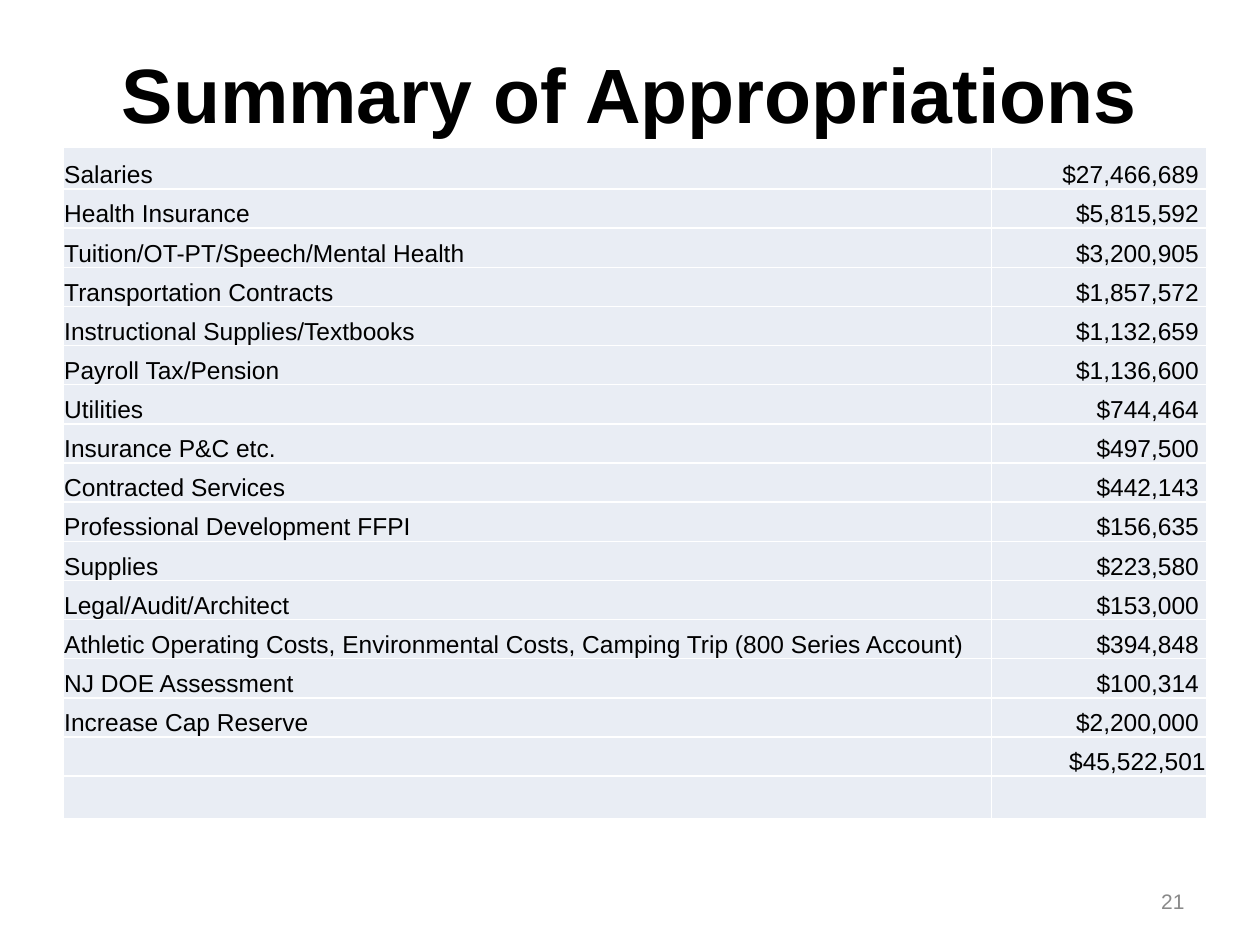
"""Build the Summary of Appropriations slide."""
from lxml.etree import SubElement
from pptx import Presentation
from pptx.dml.color import RGBColor
from pptx.enum.text import MSO_ANCHOR as Anchor, PP_ALIGN as Align
from pptx.oxml.ns import qn
from pptx.util import Inches, Pt


def style_text(text_frame, text, size, color, alignment, bold=False):
    text_frame.text = text
    paragraph = text_frame.paragraphs[0]
    paragraph.alignment = alignment
    for run in paragraph.runs:
        run.font.name = "Arial"
        run.font.size = Pt(size)
        run.font.bold = bold
        run.font.color.rgb = RGBColor.from_string(color)


def add_border(cell, side, color):
    line = SubElement(cell._tc.get_or_add_tcPr(), qn(f"a:{side}"), w=str(Pt(1)))
    fill = SubElement(line, qn("a:solidFill"))
    SubElement(fill, qn("a:srgbClr"), val=color)


appropriations = [
    ("Salaries", "$27,466,689 "),
    ("Health Insurance", "$5,815,592 "),
    ("Tuition/OT-PT/Speech/Mental Health", "$3,200,905 "),
    ("Transportation Contracts", "$1,857,572 "),
    ("Instructional Supplies/Textbooks", "$1,132,659 "),
    ("Payroll Tax/Pension", "$1,136,600 "),
    ("Utilities", "$744,464 "),
    ("Insurance P&C etc.", "$497,500 "),
    ("Contracted Services", "$442,143 "),
    ("Professional Development FFPI", "$156,635 "),
    ("Supplies", "$223,580 "),
    ("Legal/Audit/Architect", "$153,000 "),
    ("Athletic Operating Costs, Environmental Costs, Camping Trip (800 Series Account)", "$394,848 "),
    ("NJ DOE Assessment", "$100,314 "),
    ("Increase Cap Reserve", "$2,200,000 "),
    ("", "$45,522,501"),
    ("", ""),
]
column_widths = [7.37, 1.71]
first_height, last_height, table_height = 0.33, 0.34, 5.33
middle_height = (table_height - first_height - last_height) / (len(appropriations) - 2)
row_heights = [first_height] + [middle_height] * (len(appropriations) - 2) + [last_height]

presentation = Presentation()
presentation.slide_width, presentation.slide_height = Inches(10), Inches(7.5)
slide = presentation.slides.add_slide(presentation.slide_layouts[6])

labels = [
    ("Summary of Appropriations", (0.5, 0.3, 9, 0.87), 44, "000000", Align.CENTER, True),
    ("21", (7.17, 6.95, 2.33, 0.4), 12, "898989", Align.RIGHT, False),
]
for text, box, size, color, alignment, bold in labels:
    text_frame = slide.shapes.add_textbox(*map(Inches, box)).text_frame
    text_frame.word_wrap = True
    text_frame.vertical_anchor = Anchor.MIDDLE
    style_text(text_frame, text, size, color, alignment, bold)

table = slide.shapes.add_table(
    len(appropriations), len(column_widths),
    Inches(0.5), Inches(1.17), Inches(sum(column_widths)), Inches(table_height),
).table
table.first_row = table.horz_banding = False
for column, width in zip(table.columns, column_widths):
    column.width = Inches(width)
for row, height, texts in zip(table.rows, row_heights, appropriations):
    row.height = Inches(height)
    for cell, text, alignment in zip(row.cells, texts, (Align.LEFT, Align.RIGHT)):
        cell.margin_left = cell.margin_right = cell.margin_top = Inches(0.01)
        cell.margin_bottom = 0
        cell.vertical_anchor = Anchor.BOTTOM
        for side in ("lnL", "lnR", "lnT", "lnB"):
            add_border(cell, side, "FFFFFF")
        cell.fill.solid()
        cell.fill.fore_color.rgb = RGBColor.from_string("E9EDF4")
        style_text(cell.text_frame, text, 14, "000000", alignment)

presentation.save("out.pptx")
